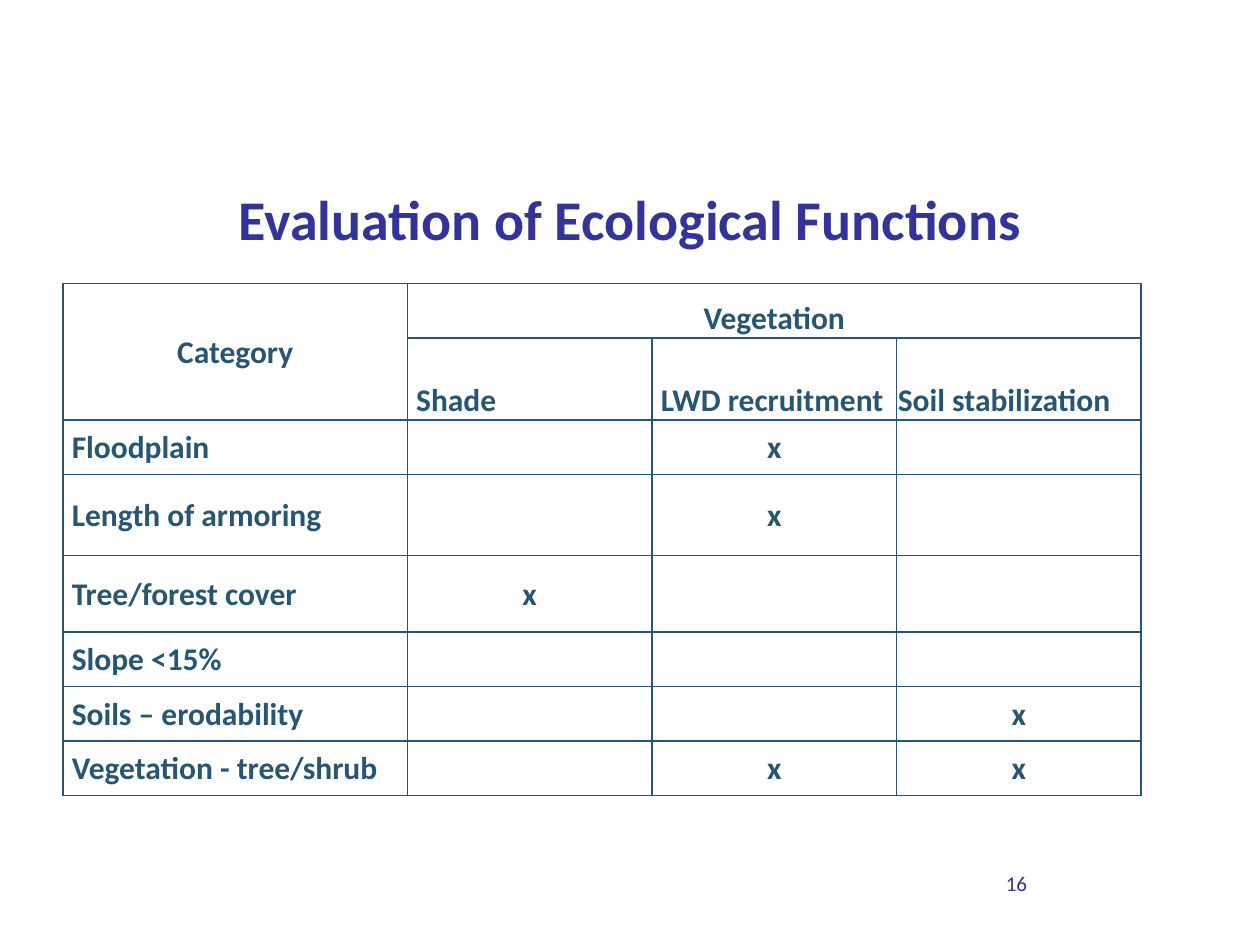
from dataclasses import dataclass

import pptx
import pptx.util
from lxml import etree
from pptx.dml.color import RGBColor
from pptx.enum.text import MSO_ANCHOR, PP_ALIGN
from pptx.oxml.ns import qn


@dataclass(frozen=True)
class Theme:
    font: str = "Calibri"
    indigo: str = "333399"
    teal: str = "275673"
    title: int = 32
    body: int = 18
    small: int = 12
    rule: float = 1


def write(tf, text, *, theme, size, color, bold=False, align=PP_ALIGN.LEFT):
    p = tf.paragraphs[0]
    p.alignment = align
    p.font.size = pptx.util.Pt(size)
    if text:
        r = p.add_run()
        r.text = text
        r.font.name = theme.font
        r.font.size = pptx.util.Pt(size)
        r.font.bold = bold
        r.font.color.rgb = RGBColor.from_string(color)


class Deck:
    """Places elements on a grid of 120 columns by 90 rows."""

    COLS, ROWS = 120, 90

    def __init__(self, theme):
        self.theme = theme
        self.prs = pptx.Presentation()
        self.prs.slide_width = pptx.util.Inches(10)
        self.prs.slide_height = pptx.util.Inches(7.5)
        self.s = self.prs.slides.add_slide(self.prs.slide_layouts[6])

    def x(self, cols):
        return round(self.prs.slide_width * cols / self.COLS)

    def y(self, rows):
        return round(self.prs.slide_height * rows / self.ROWS)

    def text(self, col, row, width, height, text, *, anchor=MSO_ANCHOR.TOP, **style):
        sp = self.s.shapes.add_textbox(self.x(col), self.y(row), self.x(width), self.y(height))
        tf = sp.text_frame
        tf.word_wrap = True
        tf.vertical_anchor = anchor
        write(tf, text, theme=self.theme, **style)

    def table(self, col, row, widths, heights):
        frame = self.s.shapes.add_table(
            len(heights), len(widths), self.x(col), self.y(row),
            self.x(sum(widths)), self.y(sum(heights)))
        tbl = frame.table
        tbl.first_row = tbl.horz_banding = False
        for column, width in zip(tbl.columns, widths):
            column.width = self.x(width)
        for line, height in zip(tbl.rows, heights):
            line.height = self.y(height)
        for cell in tbl.iter_cells():
            self.border(cell)
            cell.fill.background()
        return tbl

    def border(self, cell):
        tc_pr = cell._tc.get_or_add_tcPr()
        for side in ("a:lnL", "a:lnR", "a:lnT", "a:lnB"):
            ln = etree.SubElement(tc_pr, qn(side), w=str(pptx.util.Pt(self.theme.rule)))
            fill = etree.SubElement(ln, qn("a:solidFill"))
            etree.SubElement(fill, qn("a:srgbClr"), val=self.theme.teal)

    def cell(self, cell, text, *, indent=0.01, anchor=MSO_ANCHOR.MIDDLE, align=PP_ALIGN.LEFT):
        cell.margin_left = pptx.util.Inches(indent)
        cell.margin_right = cell.margin_top = pptx.util.Inches(0.01)
        cell.margin_bottom = 0
        cell.vertical_anchor = anchor
        write(cell.text_frame, text, theme=self.theme, size=self.theme.body,
              color=self.theme.teal, bold=True, align=align)


FUNCTIONS = ["Shade", "LWD recruitment", "Soil stabilization"]
CATEGORIES = [
    ("Floodplain", ["LWD recruitment"]),
    ("Length of armoring", ["LWD recruitment"]),
    ("Tree/forest cover", ["Shade"]),
    ("Slope <15%", []),
    ("Soils – erodability", ["Soil stabilization"]),
    ("Vegetation - tree/shrub", ["LWD recruitment", "Soil stabilization"]),
]
INDENT = 0.07


def main():
    theme = Theme()
    deck = Deck(theme)
    deck.text(77, 82, 22, 4.2, "16", anchor=MSO_ANCHOR.MIDDLE, size=theme.small,
              color=theme.indigo, align=PP_ALIGN.RIGHT)
    deck.text(6, 17, 108, 7, "Evaluation of Ecological Functions", size=theme.title,
              color=theme.indigo, bold=True, align=PP_ALIGN.CENTER)

    tbl = deck.table(6, 27, [32.8] + [23.3] * 3, [5.2, 7.8, 5.2, 7.7, 7.3] + [5.2] * 3)
    tbl.cell(0, 0).merge(tbl.cell(1, 0))
    tbl.cell(0, 1).merge(tbl.cell(0, 3))
    deck.cell(tbl.cell(0, 0), "Category", align=PP_ALIGN.CENTER)
    deck.cell(tbl.cell(0, 1), "Vegetation", anchor=MSO_ANCHOR.BOTTOM, align=PP_ALIGN.CENTER)
    for j, function in enumerate(FUNCTIONS, 1):
        indent = 0.01 if function == "Soil stabilization" else INDENT
        deck.cell(tbl.cell(1, j), function, indent=indent, anchor=MSO_ANCHOR.BOTTOM)
    for i, (category, served) in enumerate(CATEGORIES, 2):
        deck.cell(tbl.cell(i, 0), category, indent=INDENT)
        for j, function in enumerate(FUNCTIONS, 1):
            deck.cell(tbl.cell(i, j), "x" if function in served else "", align=PP_ALIGN.CENTER)

    deck.prs.save("out.pptx")


if __name__ == "__main__":
    main()
